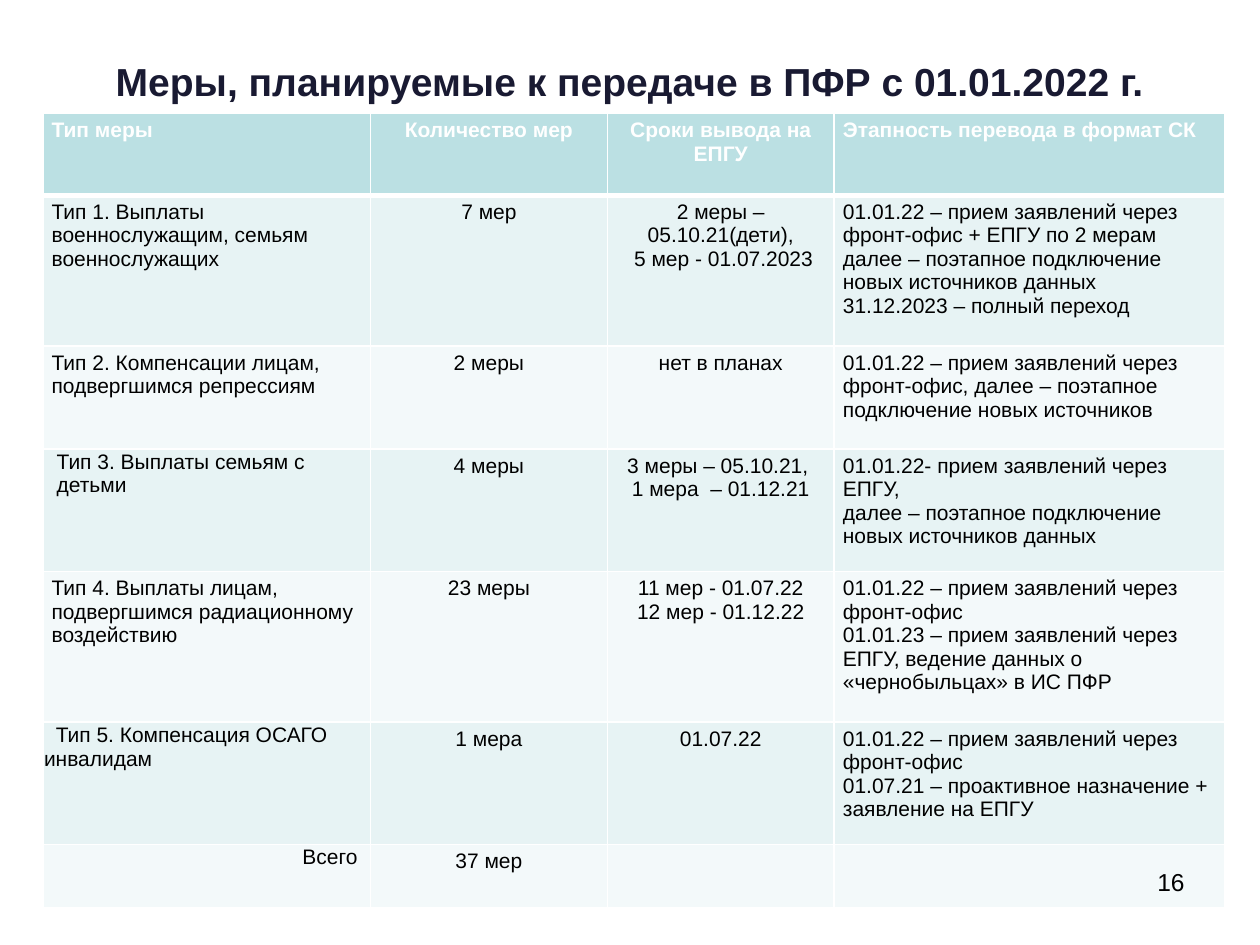
from lxml import etree
from pptx import Presentation
from pptx import util as u
from pptx.dml.color import RGBColor
from pptx.enum import text
from pptx.oxml import ns

NAVY = RGBColor(0x19, 0x1A, 0x32)
BLACK = RGBColor(0, 0, 0)
WHITE = RGBColor(0xFF, 0xFF, 0xFF)
HEADER_FILL = RGBColor(0xBB, 0xE0, 0xE3)
BAND_FILLS = [RGBColor(0xF3, 0xF9, 0xFA), RGBColor(0xE7, 0xF3, 0xF4)]
LEFT, CENTER, RIGHT = text.PP_ALIGN.LEFT, text.PP_ALIGN.CENTER, text.PP_ALIGN.RIGHT

COLUMN_WIDTHS = [187.2, 135.4, 129.6, 223.2]
COLUMN_ALIGNMENTS = [LEFT, CENTER, CENTER, LEFT]
ROW_HEIGHTS = [46.8, 86.2, 58.9, 69.9, 86.2, 69.9, 36.4]
TIGHT_ROWS = (3, 5, 6)  # first cell has almost no margins
ROWS = [
    ["Тип меры", "Количество мер", "Сроки вывода на ЕПГУ", "Этапность перевода в формат СК"],
    ["Тип 1. Выплаты военнослужащим, семьям военнослужащих", "7 мер",
     "2 меры – 05.10.21(дети),\n 5 мер - 01.07.2023",
     "01.01.22 – прием заявлений через фронт-офис + ЕПГУ по 2 мерам\n"
     "далее – поэтапное подключение новых источников данных\n"
     "31.12.2023 – полный переход"],
    ["Тип 2. Компенсации лицам, подвергшимся репрессиям", "2 меры", "нет в планах",
     "01.01.22 – прием заявлений через фронт-офис, далее – поэтапное "
     "подключение новых источников"],
    ["Тип 3. Выплаты семьям с детьми", "4 меры",
     "3 меры – 05.10.21, \n1 мера  – 01.12.21",
     "01.01.22- прием заявлений через ЕПГУ,\n"
     "далее – поэтапное подключение новых источников данных"],
    ["Тип 4. Выплаты лицам, подвергшимся радиационному воздействию", "23 меры",
     "11 мер - 01.07.22\n12 мер - 01.12.22",
     "01.01.22 – прием заявлений через фронт-офис\n"
     "01.01.23 – прием заявлений через ЕПГУ, ведение данных о «чернобыльцах» в ИС ПФР"],
    ["Тип 5. Компенсация ОСАГО инвалидам", "1 мера", "01.07.22",
     "01.01.22 – прием заявлений через фронт-офис\n"
     "01.07.21 – проактивное назначение + заявление на ЕПГУ"],
    ["Всего", "37 мер", "", ""],
]


def format_text(text_frame, size, color, bold, alignment):
    for paragraph in text_frame.paragraphs:
        paragraph.alignment = alignment
        for run in paragraph.runs:
            run.font.name = "Arial"
            run.font.size = u.Pt(size)
            run.font.bold = bold
            run.font.color.rgb = color


def add_borders(cell, bottom_width):
    properties = cell._tc.get_or_add_tcPr()
    for side, width in (("L", 1), ("R", 1), ("T", 1), ("B", bottom_width)):
        line = etree.SubElement(properties, ns.qn(f"a:ln{side}"), w=str(u.Pt(width)))
        fill = etree.SubElement(line, ns.qn("a:solidFill"))
        etree.SubElement(fill, ns.qn("a:srgbClr"), val=str(WHITE))


presentation = Presentation()
presentation.slide_width, presentation.slide_height = u.Pt(720), u.Pt(540)
slide = presentation.slides.add_slide(presentation.slide_layouts[6])

# Title
title = slide.shapes.add_textbox(u.Pt(59.8), u.Pt(32.4), u.Pt(600.5), u.Pt(33.1))
frame = title.text_frame
frame.word_wrap = True
frame.vertical_anchor = text.MSO_ANCHOR.MIDDLE
frame.margin_left = frame.margin_right = u.Pt(5)
frame.margin_top = frame.margin_bottom = u.Pt(2.9)
frame.text = "Меры, планируемые к передаче в ПФР с 01.01.2022 г. "
frame.paragraphs[0].line_spacing = 0.8
format_text(frame, 22.3, NAVY, True, CENTER)

# Table of measures
table = slide.shapes.add_table(
    len(ROWS), len(COLUMN_WIDTHS), u.Pt(24.5), u.Pt(64.8),
    u.Pt(sum(COLUMN_WIDTHS)), u.Pt(sum(ROW_HEIGHTS))).table
for column, width in zip(table.columns, COLUMN_WIDTHS):
    column.width = u.Pt(width)
for row, height in zip(table.rows, ROW_HEIGHTS):
    row.height = u.Pt(height)

for row_index, row_texts in enumerate(ROWS):
    is_header = row_index == 0
    for column_index, cell_text in enumerate(row_texts):
        cell = table.cell(row_index, column_index)
        cell.margin_left = cell.margin_right = u.Pt(5)
        cell.margin_top = cell.margin_bottom = u.Pt(2.9)
        add_borders(cell, 3 if is_header else 1)
        cell.fill.solid()
        cell.fill.fore_color.rgb = HEADER_FILL if is_header else BAND_FILLS[row_index % 2]
        cell.text_frame.text = cell_text
        format_text(cell.text_frame, 12, WHITE if is_header else BLACK, is_header,
                    COLUMN_ALIGNMENTS[column_index])

# Tight first cells and their indents
for row_index in TIGHT_ROWS:
    cell = table.cell(row_index, 0)
    cell.margin_left = cell.margin_right = cell.margin_top = u.Pt(0.7)
    cell.margin_bottom = 0
table.cell(3, 0).text_frame.paragraphs[0]._p.get_or_add_pPr().set("marL", str(u.Pt(7.2)))
table.cell(5, 0).text_frame.paragraphs[0]._p.get_or_add_pPr().set("indent", str(u.Pt(6.7)))
total_cell = table.cell(6, 0)
total_cell.margin_right = u.Pt(7.4)
total_cell.text_frame.paragraphs[0].alignment = RIGHT

# Page number
page_number = slide.shapes.add_textbox(u.Pt(516.2), u.Pt(491.8), u.Pt(167.8), u.Pt(37.4))
page_number.text_frame.word_wrap = True
page_number.text_frame.text = "16"
format_text(page_number.text_frame, 14, BLACK, False, RIGHT)

presentation.save("out.pptx")
